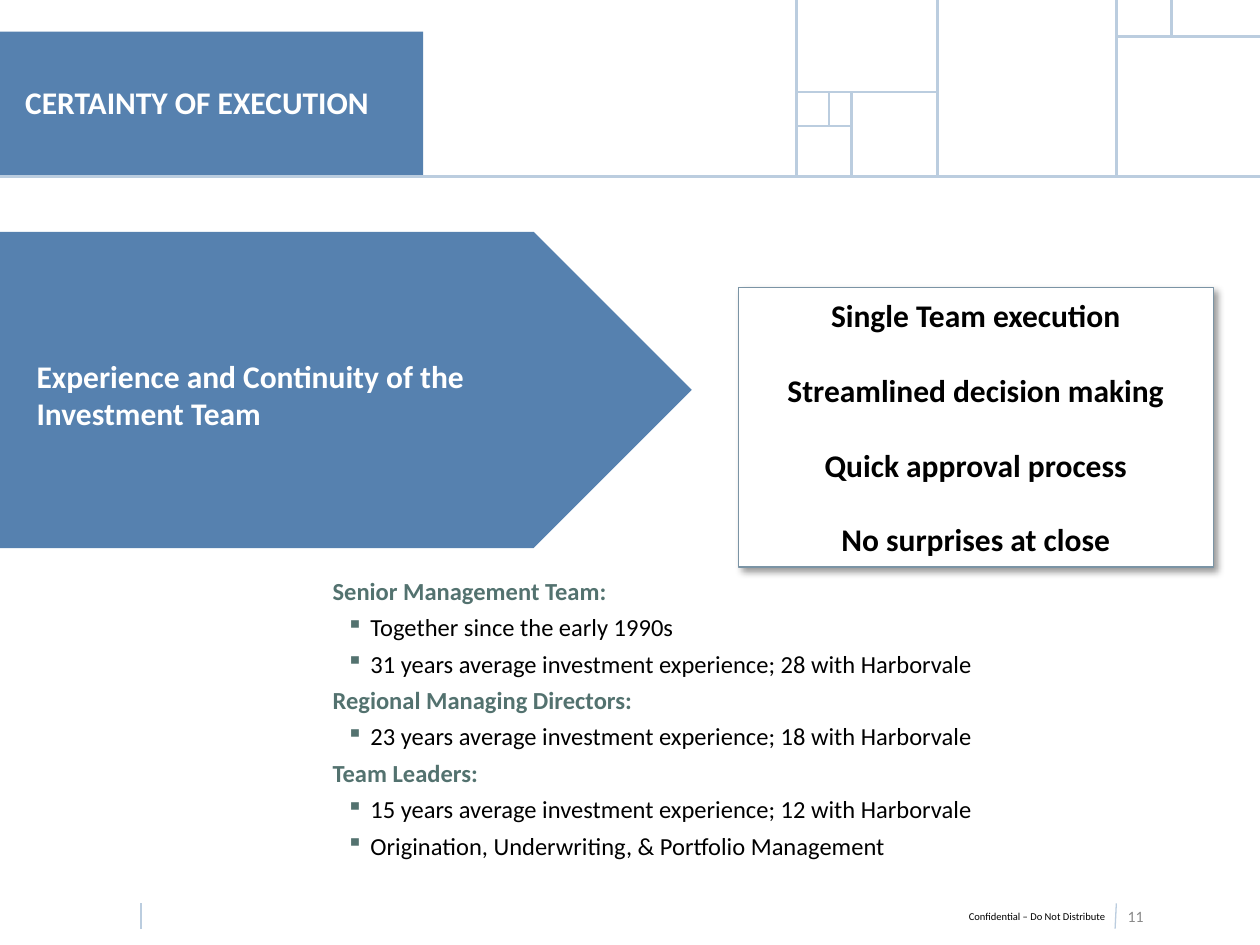
from lxml import etree
from pptx import Presentation
from pptx import util as u
from pptx.dml.color import RGBColor
from pptx.enum import shapes, text
from pptx.oxml import ns

BLUE, PALE, GREEN = "5681AF", "BBCDDF", "53726F"
WHITE, BLACK, GREY = "FFFFFF", "000000", "898989"


def color(target, value):
    """Give a fill, or the colour of a font, a solid colour."""
    if hasattr(target, "solid"):
        target.solid()
        target = target.fore_color
    else:
        target = target.color
    target.rgb = RGBColor.from_string(value)


def write(para, words, size, value, bold=False):
    span = para.add_run()
    span.text = words
    span.font.name = "Calibri"
    span.font.size = u.Pt(size)
    span.font.bold = bold
    color(span.font, value)


deck = Presentation()
deck.slide_width, deck.slide_height = u.Inches(10), u.Inches(7.5)
page = deck.slides.add_slide(deck.slide_layouts[6])

# Title band, arrow and benefits panel
panels = []
for preset, place, fill in (
    (shapes.MSO_SHAPE.RECTANGLE, (0, 0.25, 3.36, 1.15), BLUE),
    (shapes.MSO_SHAPE.PENTAGON, (0, 1.84, 5.49, 2.51), BLUE),
    (shapes.MSO_SHAPE.RECTANGLE, (5.86, 2.28, 3.77, 2.22), WHITE),
):
    panel = page.shapes.add_shape(preset, *map(u.Inches, place))
    panel.shadow.inherit = False
    color(panel.fill, fill)
    panel.line.fill.background()
    panels.append(panel)
benefits = panels[-1]

# Header grid and footer dividers
for x1, y1, x2, y2, width in (
    (8.86, 1.4, 8.86, 0, 1.5),
    (0, 1.4, 10, 1.4, 1.5),
    (8.86, 0.29, 10, 0.29, 1.5),
    (6.32, 0, 6.32, 1.4, 1.5),
    (6.76, 0.74, 6.76, 1.4, 1.5),
    (6.58, 0.74, 6.58, 1, 1.5),
    (6.32, 0.73, 7.45, 0.73, 1.5),
    (6.32, 1, 6.76, 1, 1.5),
    (7.44, 1.4, 7.44, 0, 1.5),
    (9.3, 0, 9.3, 0.28, 1.5),
    (8.86, 7.17, 8.85, 7.37, 0.75),
    (1.12, 7.17, 1.12, 7.37, 0.75),
):
    rule = page.shapes.add_connector(
        shapes.MSO_CONNECTOR.STRAIGHT, *map(u.Inches, (x1, y1, x2, y2)))
    color(rule.line.fill, PALE)
    rule.line.width = u.Pt(width)
    etree.SubElement(rule._element.spPr, ns.qn("a:effectLst"))

# Title, footer, page number and arrow label
TOP, MIDDLE, BOTTOM = (text.MSO_ANCHOR.TOP, text.MSO_ANCHOR.MIDDLE,
                       text.MSO_ANCHOR.BOTTOM)
LEFT, RIGHT = text.PP_ALIGN.LEFT, text.PP_ALIGN.RIGHT
for words, place, size, value, bold, anchor, align in (
    ("CERTAINTY OF EXECUTION", (0.2, 0.34, 3.1, 0.94), 18, WHITE, True, MIDDLE, LEFT),
    ("Confidential – Do Not Distribute", (6.8, 7.22, 1.97, 0.1), 6, BLACK, False, TOP, RIGHT),
    ("11", (8.95, 7.13, 0.29, 0.29), 9, GREY, False, MIDDLE, LEFT),
    ("Experience and Continuity of the Investment Team",
     (0.29, 2, 3.75, 1.43), 18, WHITE, True, BOTTOM, LEFT),
):
    box = page.shapes.add_textbox(*map(u.Inches, place))
    frame = box.text_frame
    frame.word_wrap = True
    frame.vertical_anchor = anchor
    frame.margin_left = frame.margin_right = 0
    frame.margin_top = frame.margin_bottom = 0
    frame.paragraphs[0].alignment = align
    write(frame.paragraphs[0], words, size, value, bold)

# Benefits panel: outline, soft shadow, evenly spaced lines
color(benefits.line.fill, "7B94A5")
benefits.line.width = u.Pt(0.75)
effects = benefits._element.spPr.find(ns.qn("a:effectLst"))
shadow = etree.SubElement(
    effects, ns.qn("a:outerShdw"), blurRad=str(u.Pt(4)), dist=str(u.Pt(3)),
    dir=str(45 * 60000), algn="tl", rotWithShape="0")
tint = etree.SubElement(shadow, ns.qn("a:srgbClr"), val=BLACK)
etree.SubElement(tint, ns.qn("a:alpha"), val="40000")

frame = benefits.text_frame
frame.word_wrap = True
frame.vertical_anchor = MIDDLE
for i, words in enumerate((
    "Single Team execution",
    "Streamlined decision making",
    "Quick approval process",
    "No surprises at close",
)):
    para = frame.add_paragraph() if i else frame.paragraphs[0]
    para.alignment = text.PP_ALIGN.CENTER
    if i:
        para.space_before = u.Pt(21)
    write(para, words, 18, BLACK, True)

# Team experience: headings with bulleted facts
teams = (
    ("Senior Management Team:", (
        "Together since the early 1990s",
        "31 years average investment experience; 28 with Harborvale")),
    ("Regional Managing Directors:", (
        "23 years average investment experience; 18 with Harborvale",)),
    ("Team Leaders:", (
        "15 years average investment experience; 12 with Harborvale",
        "Origination, Underwriting, & Portfolio Management")),
)
box = page.shapes.add_textbox(*map(u.Inches, (2.64, 4.57, 5.34, 2.14)))
frame = box.text_frame
frame.word_wrap = True
frame.margin_left = frame.margin_right = frame.margin_top = frame.margin_bottom = 0
for i, (heading, facts) in enumerate(teams):
    para = frame.add_paragraph() if i else frame.paragraphs[0]
    if i:
        para.space_before = u.Pt(4)
    write(para, heading, 14, GREEN, True)
    for fact in facts:
        para = frame.add_paragraph()
        props = para._p.get_or_add_pPr()
        props.set("marL", str(u.Inches(0.3)))
        props.set("indent", str(u.Inches(-0.19)))
        tint = etree.SubElement(props, ns.qn("a:buClr"))
        etree.SubElement(tint, ns.qn("a:srgbClr"), val=GREEN)
        etree.SubElement(props, ns.qn("a:buSzPct"), val="95000")
        etree.SubElement(props, ns.qn("a:buChar"), char="▪")
        para.space_before = u.Pt(4)
        write(para, fact, 14, BLACK)

deck.save("out.pptx")
